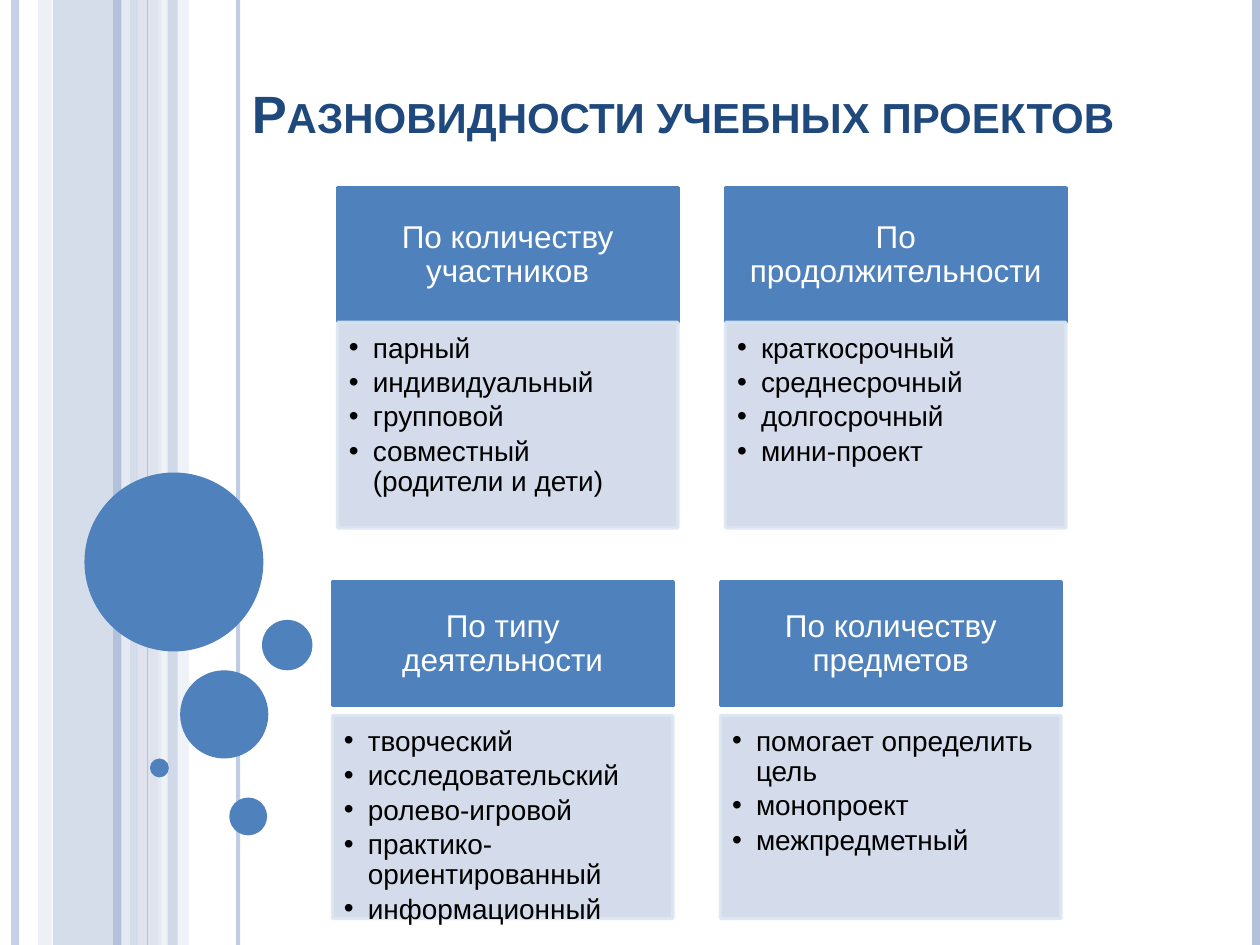
from lxml import etree
from pptx import Presentation
from pptx.dml.color import RGBColor
from pptx.enum.shapes import MSO_CONNECTOR, MSO_SHAPE
from pptx.enum.text import MSO_ANCHOR, PP_ALIGN
from pptx.oxml.ns import qn
from pptx.util import Inches, Pt

RECT, OVAL = MSO_SHAPE.RECTANGLE, MSO_SHAPE.OVAL
STRAIGHT = MSO_CONNECTOR.STRAIGHT
TOP, MIDDLE, BOTTOM = MSO_ANCHOR.TOP, MSO_ANCHOR.MIDDLE, MSO_ANCHOR.BOTTOM
LEFT, CENTER = PP_ALIGN.LEFT, PP_ALIGN.CENTER

WIDTH, HEIGHT = 10, 7.5
FONT = "Arial"
BLUE, NAVY, WHITE, BLACK = "4F81BD", "1F497D", "FFFFFF", "000000"
STEEL, MIST, PALE, EDGE = "B3C1DB", "D0D8E8", "E9EDF4", "DCE6F2"
CARD_WIDTH, CARD_STEP = 2.7, 3.08
HEADER_INSETS = (0.14, 0.08, 0.14, 0.08)
LIST_INSETS = (0.09, 0.09, 0.12, 0.14)
BULLET_INDENT = 0.19

BANDS = [(0.42, 0.67, STEEL, 54), (0.3, 0.11, MIST, 36),
         (1.08, 0.2, MIST, 70), (1.25, 0.25, PALE, 71)]
STRIPES = [(0.12, 4.5, STEEL, 73), (1, 4.5, PALE, 83), (0.93, 4.5, STEEL, 100),
           (1.89, 2.25, STEEL, 82), (1.17, 0.75, STEEL, 100),
           (9.97, 4.5, STEEL, 100)]
FRONT_BAND = (1.33, 0.08, STEEL, 51)
BUBBLES = [(0.67, 3.75, 1.42), (1.43, 5.32, 0.7), (1.19, 6.02, 0.15),
           (1.82, 6.33, 0.3), (2.08, 4.92, 0.4)]

CARD_ROWS = [
    {"left": 2.68, "header": (1.49, 1.07), "list": (2.56, 1.63), "cards": [
        ("По количеству участников",
         ["парный", "индивидуальный", "групповой",
          "совместный (родители и дети)"]),
        ("По продолжительности",
         ["краткосрочный", "среднесрочный", "долгосрочный", "мини-проект"])]},
    {"left": 2.64, "header": (4.62, 0.98), "list": (5.68, 1.61), "cards": [
        ("По типу деятельности",
         ["творческий", "исследовательский", "ролево-игровой",
          "практико-ориентированный", "информационный"]),
        ("По количеству предметов",
         ["помогает определить цель", "монопроект", "межпредметный"])]},
]


def paint(color_format, color, opacity=100):
    """Set a hex colour and its opacity in percent on a solid fill."""
    color_format.solid()
    color_format.fore_color.rgb = RGBColor.from_string(color)
    if opacity < 100:
        srgb = color_format._xPr.find(".//" + qn("a:srgbClr"))
        etree.SubElement(srgb, qn("a:alpha")).set("val", str(opacity * 1000))


def add_block(slide, kind, box, color, opacity=100, edge=None):
    """Add a filled preset shape, with a 2 pt edge when a colour is given."""
    block = slide.shapes.add_shape(kind, *map(Inches, box))
    block.shadow.inherit = False
    paint(block.fill, color, opacity)
    if edge:
        paint(block.line.fill, edge, opacity)
        block.line.width = Pt(2)
    else:
        block.line.fill.background()
    return block


def add_band(slide, left, width, color, opacity):
    """Add a full-height translucent band."""
    add_block(slide, RECT, (left, 0, width, HEIGHT), color, opacity)


def add_stripe(slide, x, weight, color, opacity):
    """Add a full-height vertical line."""
    stripe = slide.shapes.add_connector(
        STRAIGHT, Inches(x), 0, Inches(x), Inches(HEIGHT))
    paint(stripe.line.fill, color, opacity)
    stripe.line.width = Pt(weight)
    etree.SubElement(stripe._element.spPr, qn("a:effectLst"))


def set_frame(frame, anchor, insets):
    """Wrap a text frame and set its anchor and insets."""
    frame.word_wrap = True
    frame.vertical_anchor = anchor
    (frame.margin_left, frame.margin_top,
     frame.margin_right, frame.margin_bottom) = map(Inches, insets)


def add_run(paragraph, text, size, color, bold=False):
    """Append a styled run to a paragraph."""
    run = paragraph.add_run()
    run.text = text
    run.font.name = FONT
    run.font.size = Pt(size)
    run.font.bold = bold
    run.font.color.rgb = RGBColor.from_string(color)
    return run


def add_bullet(paragraph):
    """Give a paragraph a hanging round bullet."""
    properties = paragraph._p.get_or_add_pPr()
    properties.set("marL", str(Inches(BULLET_INDENT)))
    properties.set("indent", str(-Inches(BULLET_INDENT)))
    etree.SubElement(properties, qn("a:buFont")).set("typeface", FONT)
    etree.SubElement(properties, qn("a:buChar")).set("char", "•")


def add_title(slide, text):
    """Add the slide heading in bold small capitals."""
    heading = slide.shapes.add_textbox(
        *map(Inches, (1.9, 0.52, WIDTH - 1.9, 0.67)))
    set_frame(heading.text_frame, BOTTOM, (0.1, 0.05, 0.1, 0.05))
    run = add_run(heading.text_frame.paragraphs[0], text, 30, NAVY, True)
    run.font._element.set("cap", "small")


def add_header(slide, box, text):
    """Add the solid header of a card."""
    frame = add_block(slide, RECT, box, BLUE, edge=BLUE).text_frame
    set_frame(frame, MIDDLE, HEADER_INSETS)
    paragraph = frame.paragraphs[0]
    paragraph.alignment = CENTER
    paragraph.line_spacing = 0.9
    add_run(paragraph, text, 18, WHITE)


def add_list(slide, box, items):
    """Add the pale bulleted body of a card."""
    frame = add_block(slide, RECT, box, MIST, 90, EDGE).text_frame
    set_frame(frame, TOP, LIST_INSETS)
    for index, item in enumerate(items):
        paragraph = frame.add_paragraph() if index else frame.paragraphs[0]
        paragraph.alignment = LEFT
        paragraph.line_spacing = 0.9
        paragraph.space_after = Pt(2.4)
        add_bullet(paragraph)
        add_run(paragraph, item, 16, BLACK)


def add_card_row(slide, row):
    """Add one row of cards at equal steps."""
    for column, (header, items) in enumerate(row["cards"]):
        left = row["left"] + column * CARD_STEP
        header_top, header_height = row["header"]
        list_top, list_height = row["list"]
        add_header(slide, (left, header_top, CARD_WIDTH, header_height), header)
        add_list(slide, (left, list_top, CARD_WIDTH, list_height), items)


def main():
    """Build and save the slide."""
    deck = Presentation()
    deck.slide_width, deck.slide_height = Inches(WIDTH), Inches(HEIGHT)
    slide = deck.slides.add_slide(deck.slide_layouts[6])
    paint(slide.background.fill, WHITE)
    for band in BANDS:
        add_band(slide, *band)
    for stripe in STRIPES:
        add_stripe(slide, *stripe)
    add_band(slide, *FRONT_BAND)
    for left, top, diameter in BUBBLES:
        add_block(slide, OVAL, (left, top, diameter, diameter), BLUE)
    add_title(slide, "Разновидности учебных проектов")
    for row in CARD_ROWS:
        add_card_row(slide, row)
    deck.save("out.pptx")


if __name__ == "__main__":
    main()
